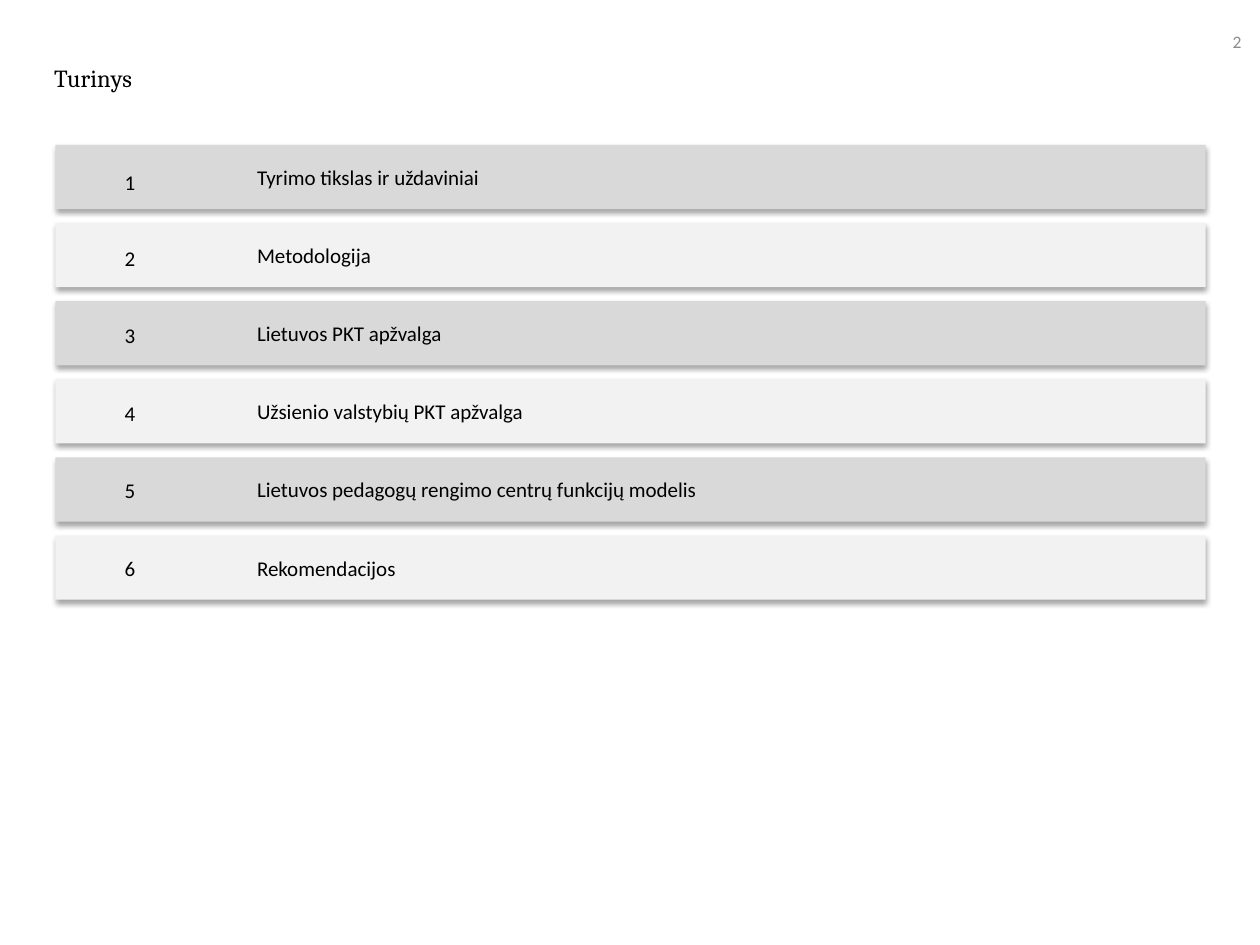
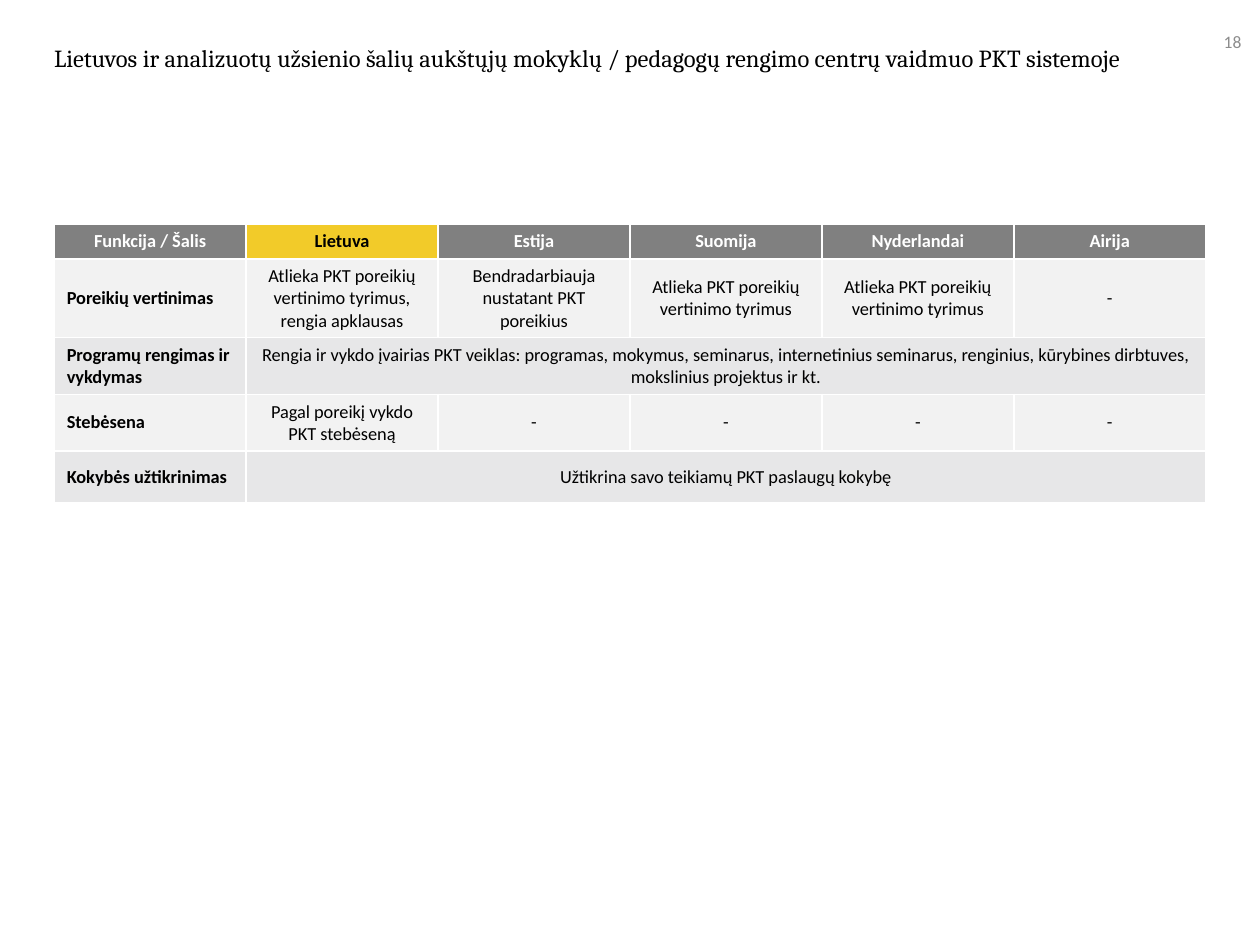
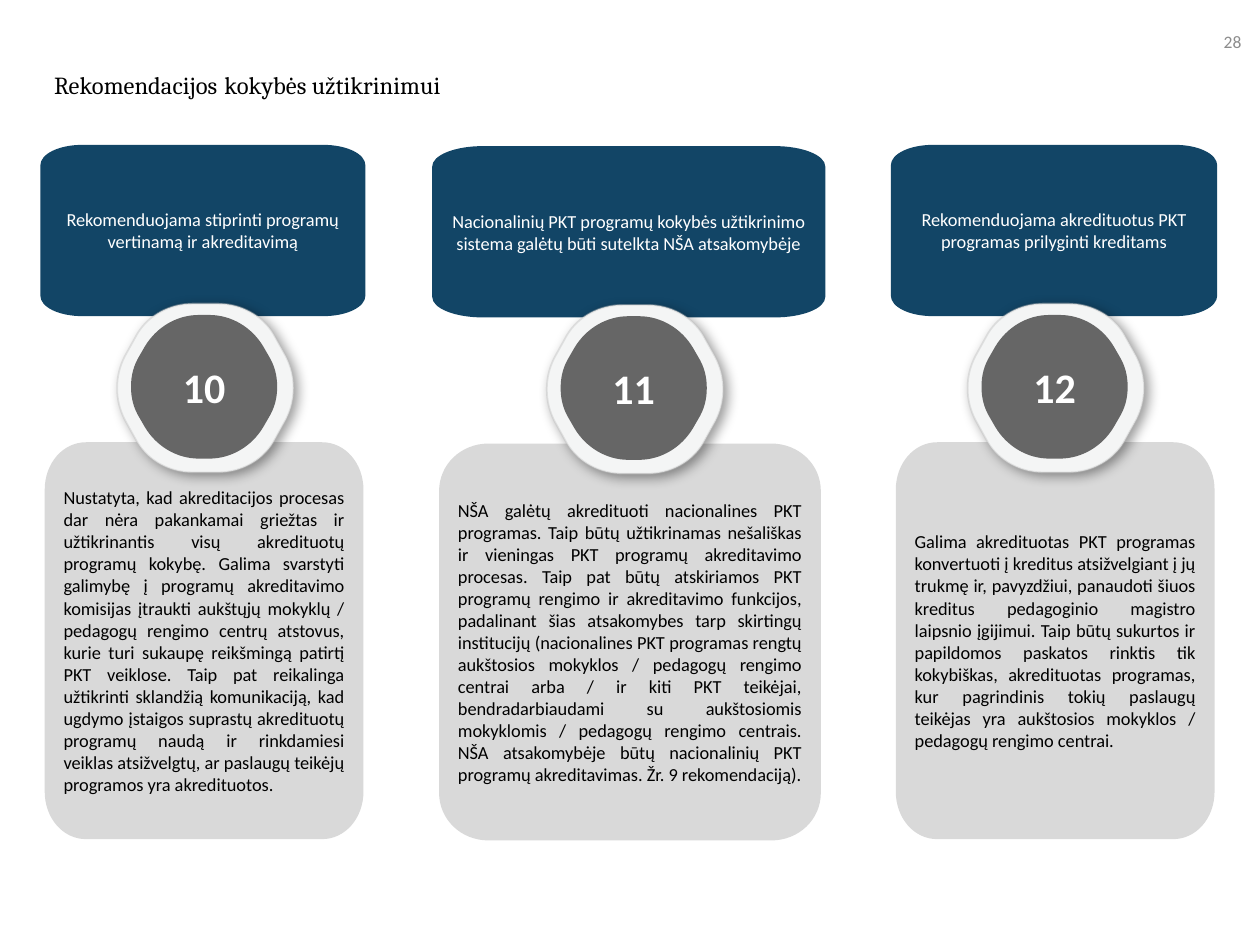
import pptx
import pptx.util
import pptx.dml.color
import pptx.enum.shapes
import pptx.enum.text
import pptx.oxml
import pptx.oxml.ns

Inches = pptx.util.Inches
ALIGN = pptx.enum.text.PP_ALIGN
MIDDLE = pptx.enum.text.MSO_ANCHOR.MIDDLE
RECT = pptx.enum.shapes.MSO_SHAPE.RECTANGLE
HUES = {
    "black": "000000", "white": "FFFFFF", "page": "8C8C8C", "dark": "D9D9D9",
    "light": "F2F2F2", "band": "E7E7E8", "head": "808080", "gold": "F2CB29",
    "navy": "124566", "ring": "F4F5F5", "edge": "BFBFBF", "disc": "666666",
}
TOPICS = [
    "Tyrimo tikslas ir uždaviniai", "Metodologija", "Lietuvos PKT apžvalga",
    "Užsienio valstybių PKT apžvalga",
    "Lietuvos pedagogų rengimo centrų funkcijų modelis", "Rekomendacijos",
]
SURVEY = "Atlieka PKT poreikių vertinimo tyrimus"
ROLES = [
    ["Funkcija / Šalis", "Lietuva", "Estija", "Suomija", "Nyderlandai", "Airija"],
    ["Poreikių vertinimas", SURVEY + ", rengia apklausas",
     "Bendradarbiauja nustatant PKT poreikius", SURVEY, SURVEY, "-"],
    ["Programų rengimas ir vykdymas",
     "Rengia ir vykdo įvairias PKT veiklas: programas, mokymus, seminarus, "
     "internetinius seminarus, renginius, kūrybines dirbtuves, mokslinius projektus ir kt."],
    ["Stebėsena", "Pagal poreikį vykdo PKT stebėseną", "-", "-", "-", "-"],
    ["Kokybės užtikrinimas", "Užtikrina savo teikiamų PKT paslaugų kokybę"],
]
ADVICE = [
    ((0.32, 1.15, 2.58), 2.53, 1.63, "10",
     "Rekomenduojama stiprinti programų vertinamą ir akreditavimą",
     "Nustatyta, kad akreditacijos procesas dar nėra pakankamai griežtas ir užtikrinantis "
     "visų akredituotų programų kokybę. Galima svarstyti galimybę į programų akreditavimo "
     "komisijas įtraukti aukštųjų mokyklų / pedagogų rengimo centrų atstovus, kurie turi "
     "sukaupę reikšmingą patirtį PKT veiklose. Taip pat reikalinga užtikrinti sklandžią "
     "komunikaciją, kad ugdymo įstaigos suprastų akredituotų programų naudą ir rinkdamiesi "
     "veiklas atsižvelgtų, ar paslaugų teikėjų programos yra akredituotos."),
    ((3.43, 1.16, 3.12), 3.03, 5.04, "11",
     "Nacionalinių PKT programų kokybės užtikrinimo sistema galėtų būti sutelkta NŠA atsakomybėje",
     "NŠA galėtų akredituoti nacionalines PKT programas. Taip būtų užtikrinamas nešališkas "
     "ir vieningas PKT programų akreditavimo procesas. Taip pat būtų atskiriamos PKT programų "
     "rengimo ir akreditavimo funkcijos, padalinant šias atsakomybes tarp skirtingų "
     "institucijų (nacionalines PKT programas rengtų aukštosios mokyklos / pedagogų rengimo "
     "centrai arba / ir kiti PKT teikėjai, bendradarbiaudami su aukštosiomis mokyklomis / "
     "pedagogų rengimo centrais. NŠA atsakomybėje būtų nacionalinių PKT programų "
     "akreditavimas. Žr. 9 rekomendaciją)."),
    ((7.07, 1.15, 2.59), 2.53, 8.38, "12",
     "Rekomenduojama akredituotus PKT programas prilyginti kreditams",
     "Galima akredituotas PKT programas konvertuoti į kreditus atsižvelgiant į jų trukmę ir, "
     "pavyzdžiui, panaudoti šiuos kreditus pedagoginio magistro laipsnio įgijimui. Taip būtų "
     "sukurtos ir papildomos paskatos rinktis tik kokybiškas, akredituotas programas, kur "
     "pagrindinis tokių paslaugų teikėjas yra aukštosios mokyklos / pedagogų rengimo centrai."),
]
RING = [
    [(-0.1, -0.67), (-0.28, -0.67), (-0.45, -0.58), (-0.54, -0.43)],
    [(-0.64, -0.25), (-0.68, -0.17), (-0.7, -0.09), (-0.7, 0)],
]
DISC = [
    [(-0.04, -0.57), (-0.22, -0.57), (-0.38, -0.47), (-0.47, -0.32)],
    [(-0.51, -0.25), (-0.56, -0.17), (-0.58, -0.09), (-0.58, 0)],
]


def hue(name):
    """Return the named colour."""
    return pptx.dml.color.RGBColor.from_string(HUES[name])


def put(item, vals):
    """Set each format value on the item."""
    for key, val in vals.items():
        setattr(item, key, val)


def pad(left, top, right, low):
    """Return text margins in inches as format values."""
    names = ("margin_left", "margin_top", "margin_right", "margin_bottom")
    return {name: Inches(val) for name, val in zip(names, (left, top, right, low))}


def write(frame, runs, tone="black", para=None, **font):
    """Write (text, size) runs as the only paragraph of a text frame."""
    line = frame.paragraphs[0]
    put(line, {"alignment": ALIGN.LEFT, **(para or {})})
    for text, size in runs:
        run = line.add_run()
        run.text = text
        put(run.font, {"name": "Calibri", "size": pptx.util.Pt(size), **font})
        run.font.color.rgb = hue(tone)


def paint(shape, tone):
    """Give a shape a plain fill with no line or shadow."""
    shape.shadow.inherit = False
    shape.fill.solid()
    shape.fill.fore_color.rgb = hue(tone)
    shape.line.fill.background()


def shade(shape, alpha, blur, dist, angle):
    """Add an outer shadow to a painted shape."""
    spot = shape.element.spPr.find(pptx.oxml.ns.qn("a:effectLst"))
    spot.append(pptx.oxml.parse_xml(
        f'<a:outerShdw {pptx.oxml.ns.nsdecls("a")} blurRad="{pptx.util.Pt(blur)}" '
        f'dist="{pptx.util.Pt(dist)}" dir="{angle * 60000}" algn="tl" rotWithShape="0">'
        f'<a:srgbClr val="{HUES["black"]}"><a:alpha val="{alpha * 1000}"/></a:srgbClr>'
        '</a:outerShdw>'))


def label(slide, box, runs, fit, **style):
    """Place a text box with its frame settings."""
    frame = slide.shapes.add_textbox(*map(Inches, box)).text_frame
    put(frame, {"word_wrap": True, **fit})
    write(frame, runs, **style)


def start(deck, page, title, top=0.45):
    """Add a slide with its page number and title."""
    slide = deck.slides.add_slide(deck.slide_layouts[6])
    label(slide, (9.53, 0.13, 0.42, 0.4), [(page, 10)], {"vertical_anchor": MIDDLE},
          tone="page", para={"alignment": ALIGN.RIGHT})
    label(slide, (0.43, top, 9.14, 0.54), title, pad(0, 0.05, 0.1, 0.05), name="Cambria")
    return slide


def bar(slide, left, top, index, topic):
    """Draw one contents row with its number."""
    tone = ("dark", "light")[index % 2]
    row = slide.shapes.add_shape(RECT, *map(Inches, (left, top + 0.62 * index, 9.13, 0.51)))
    paint(row, tone)
    shade(row, 35, 3.1, 1.8, 90)
    put(row.text_frame, {"vertical_anchor": MIDDLE, "word_wrap": True,
                         **pad(1.6, 0.05, 0.1, 0.05)})
    write(row.text_frame, [(topic, 12)])
    low = top + 0.13 + 3.08 * index / 5
    mark = slide.shapes.add_shape(RECT, *map(Inches, (left + 0.45, low, 0.29, 0.3)))
    paint(mark, tone)
    put(mark.text_frame, {"word_wrap": False, "vertical_anchor": pptx.enum.text.MSO_ANCHOR.TOP})
    write(mark.text_frame, [(str(index + 1), 12)],
          para={"line_spacing": 1.0 if index else 1.1})


def grid(slide, left, top, width):
    """Build the table of roles by country."""
    count = len(ROLES[0])
    box = map(Inches, (left, top, width, 1.8))
    table = slide.shapes.add_table(len(ROLES), count, *box).table
    table.horz_banding = False
    for col in table.columns:
        col.width = Inches(width / count)
    for r, texts in enumerate(ROLES):
        table.rows[r].height = Inches(0.41 if r else 0.16)
        for c in range(count):
            cell = table.cell(r, c)
            tone = ("band", "light")[r % 2] if r else ("gold" if c == 1 else "head")
            cell.fill.solid()
            cell.fill.fore_color.rgb = hue(tone)
            cell.vertical_anchor = MIDDLE
            if c < len(texts):
                side = ALIGN.LEFT if r and not c else ALIGN.CENTER
                write(cell.text_frame, [(texts[c], 10.5)],
                      "white" if tone == "head" else "black",
                      {"alignment": side}, bold=not (r and c))
        if len(texts) < count:
            table.cell(r, 1).merge(table.cell(r, count - 1))


def curl(shape, curves):
    """Turn the straight steps through each curve's points into a true curve."""
    steps = list(shape.element.iter(pptx.oxml.ns.qn("a:lnTo")))
    for k, curve in enumerate(curves):
        trio = steps[4 * k:4 * k + 3]
        bend = pptx.oxml.parse_xml(f'<a:cubicBezTo {pptx.oxml.ns.nsdecls("a")}/>')
        trio[0].addprevious(bend)
        for step in trio:
            bend.append(step[0])
            step.getparent().remove(step)
        if k and curve[0] == curves[k - 1][-1]:
            steps[4 * k - 1].getparent().remove(steps[4 * k - 1])


def form(shapes, mid, part, tone):
    """Draw a curved outline from its upper left quarter, mirrored about the middle."""
    half = part + [[(x, -y) for x, y in reversed(curve)] for curve in reversed(part)]
    curves = half + [[(-x, -y) for x, y in curve] for curve in half]
    spots = [(Inches(mid[0] + x), Inches(mid[1] + y)) for curve in curves for x, y in curve]
    build = shapes.build_freeform(*spots[0])
    build.add_line_segments(spots[1:])
    shape = build.convert_to_shape()
    curl(shape, curves)
    paint(shape, tone)
    return shape


def fill(shape, text, size, inset, tone, side, **font):
    """Write centred-height text into a shape."""
    put(shape.text_frame, {"vertical_anchor": MIDDLE, "word_wrap": True, **pad(*[inset] * 4)})
    write(shape.text_frame, [(text, size)], tone, {"alignment": side}, **font)


def panel(slide, box, tone, text, ink, side):
    """Draw a panel with oval corners and its text."""
    left, top, width, height = box
    x, y = width / 2, height / 2
    rx, ry = 0.13 * width, 0.12 * height
    curve = [(rx - x, -y), (0.44 * rx - x, -y), (-x, 0.44 * ry - y), (-x, ry - y)]
    shape = form(slide.shapes, (left + x, top + y), [curve], tone)
    fill(shape, text, 10.5, 0.15, ink, side)


def badge(slide, x, y, text):
    """Draw a numbered badge round a middle point."""
    group = slide.shapes.add_group_shape()
    ring = form(group.shapes, (x, y), RING, "ring")
    ring.line.color.rgb = hue("edge")
    ring.line.width = pptx.util.Pt(1)
    edge = ring.element.spPr.find(pptx.oxml.ns.qn("a:ln"))
    ink = edge.find(".//" + pptx.oxml.ns.qn("a:srgbClr"))
    ink.append(pptx.oxml.parse_xml(f'<a:alpha {pptx.oxml.ns.nsdecls("a")} val="40000"/>'))
    shade(ring, 40, 7, 3, 40)
    disc = form(group.shapes, (x - 0.01, y - 0.01), DISC, "disc")
    fill(disc, text, 24, 0.03, "white", ALIGN.CENTER, bold=True)


def advise(slide, box, wide, hub, mark, head, body):
    """Draw one column: body, head and badge."""
    left, top, width = box
    inner = left + (width - wide) / 2 + 0.01
    panel(slide, (inner, top + 2.36, wide, 3.15), "dark", body, "black", ALIGN.JUSTIFY)
    panel(slide, (left, top, width, 1.36), "navy", head, "white", ALIGN.CENTER)
    badge(slide, hub, top + 1.93, mark)


def main():
    """Build and save the deck."""
    deck = pptx.Presentation()
    put(deck, {"slide_width": Inches(10), "slide_height": Inches(7.5)})
    slide = start(deck, "2", [("Turinys", 14)])
    for index, topic in enumerate(TOPICS):
        bar(slide, 0.44, 1.15, index, topic)
    slide = start(deck, "18", [("Lietuvos ir analizuotų užsienio šalių aukštųjų mokyklų / "
                                "pedagogų rengimo centrų vaidmuo PKT sistemoje", 14)], 0.29)
    grid(slide, 0.43, 1.78, 9.14)
    slide = start(deck, "28", [("Rekomendacijos", 14), (" ", 18), ("kokybės užtikrinimui", 14)])
    for column in ADVICE:
        advise(slide, *column)
    deck.save("out.pptx")


if __name__ == "__main__":
    main()
